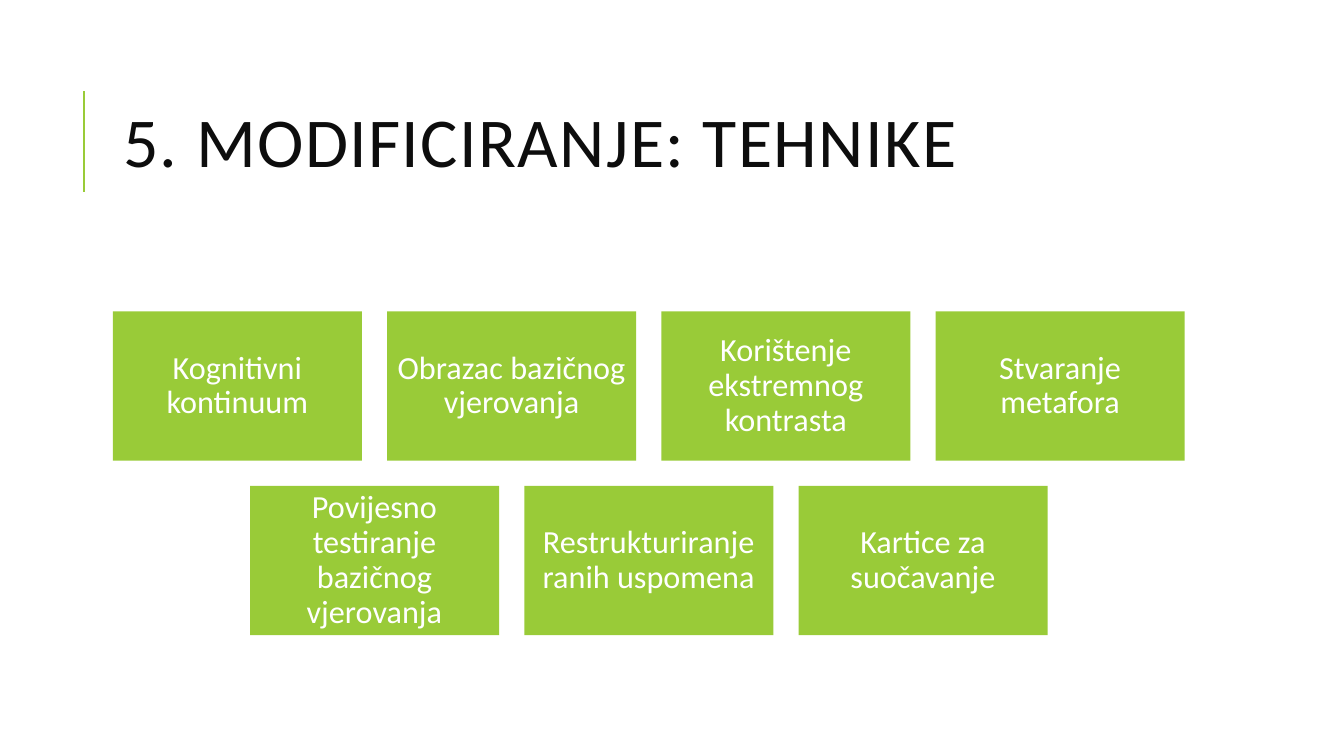
import pptx
import pptx.util
import pptx.dml.color
import pptx.enum.shapes
import pptx.enum.text
import pptx.oxml

Inches, Pt = pptx.util.Inches, pptx.util.Pt
ALIGN, ANCHOR = pptx.enum.text.PP_ALIGN, pptx.enum.text.MSO_ANCHOR

GREEN, WHITE, INK = "99CB38", "FFFFFF", "0D0D0D"
TECHNIQUE_ROWS = [
    ["Kognitivni kontinuum", "Obrazac bazičnog vjerovanja",
     "Korištenje ekstremnog kontrasta", "Stvaranje metafora"],
    ["Povijesno testiranje bazičnog vjerovanja",
     "Restrukturiranje ranih uspomena", "Kartice za suočavanje"],
]
TITLE_FORMAT = {"name": "Calibri", "size": Pt(50), "bold": False}
TILE_FORMAT = {"name": "Calibri", "size": Pt(23), "bold": False}


def color(value):
    return pptx.dml.color.RGBColor.from_string(value)


def write(tf, text, font_format, text_color, align, line_spacing):
    """Fill a text frame with one formatted paragraph."""
    tf.word_wrap = True
    tf.auto_size = pptx.enum.text.MSO_AUTO_SIZE.NONE
    tf.vertical_anchor = ANCHOR.MIDDLE
    p = tf.paragraphs[0]
    p.alignment, p.line_spacing = align, line_spacing
    r = p.add_run()
    r.text = text
    for key, value in font_format.items():
        setattr(r.font, key, value)
    r.font.color.rgb = color(text_color)
    return r


def add_title(s, text, left, top, width, height):
    # Title placeholder
    sp = s.shapes.title
    sp.left, sp.top = Inches(left), Inches(top)
    sp.width, sp.height = Inches(width), Inches(height)
    r = write(sp.text_frame, text, TITLE_FORMAT, INK, ALIGN.LEFT, 0.8)
    r.font._element.set("spc", "100")

    # Accent rule to the left of the title
    x = Inches(left - 0.29)
    rule = s.shapes.add_connector(
        pptx.enum.shapes.MSO_CONNECTOR.STRAIGHT,
        x, Inches(top + 1.26), x, Inches(top + 0.26))
    rule.line.color.rgb = color(GREEN)
    rule.line.width = Pt(1.5)
    rule._element.spPr.append(pptx.oxml.parse_xml(
        '<a:effectLst xmlns:a="http://schemas.openxmlformats.org/drawingml/2006/main"/>'))


def add_tile(s, text, left, top, width, height):
    sp = s.shapes.add_shape(
        pptx.enum.shapes.MSO_SHAPE.RECTANGLE,
        Inches(left), Inches(top), Inches(width), Inches(height))
    sp.shadow.inherit = False
    sp.fill.solid()
    sp.fill.fore_color.rgb = color(GREEN)
    sp.line.fill.background()
    tf = sp.text_frame
    for side in ("left", "top", "right", "bottom"):
        setattr(tf, f"margin_{side}", Inches(0.09))
    write(tf, text, TILE_FORMAT, WHITE, ALIGN.CENTER, 0.9)


def add_tile_rows(s, rows, left, top, width, height, gap=0.25):
    """Equal tiles in rows, each row centred in the box."""
    columns = max(len(row) for row in rows)
    tile_w = (width - gap * (columns - 1)) / columns
    tile_h = (height - gap * (len(rows) - 1)) / len(rows)
    for i, row in enumerate(rows):
        row_left = left + (columns - len(row)) * (tile_w + gap) / 2
        for j, text in enumerate(row):
            add_tile(s, text, row_left + j * (tile_w + gap),
                     top + i * (tile_h + gap), tile_w, tile_h)


def main():
    prs = pptx.Presentation()
    prs.slide_width, prs.slide_height = Inches(13.33), Inches(7.5)
    s = prs.slides.add_slide(prs.slide_layouts.get_by_name("Title Only"))
    add_title(s, "5. MODIFICIRANJE: TEHNIKE", 1.12, 0.64, 10.63, 1.64)
    add_tile_rows(s, TECHNIQUE_ROWS, 1.12, 3.09, 10.63, 3.21)
    prs.save("out.pptx")


if __name__ == "__main__":
    main()
